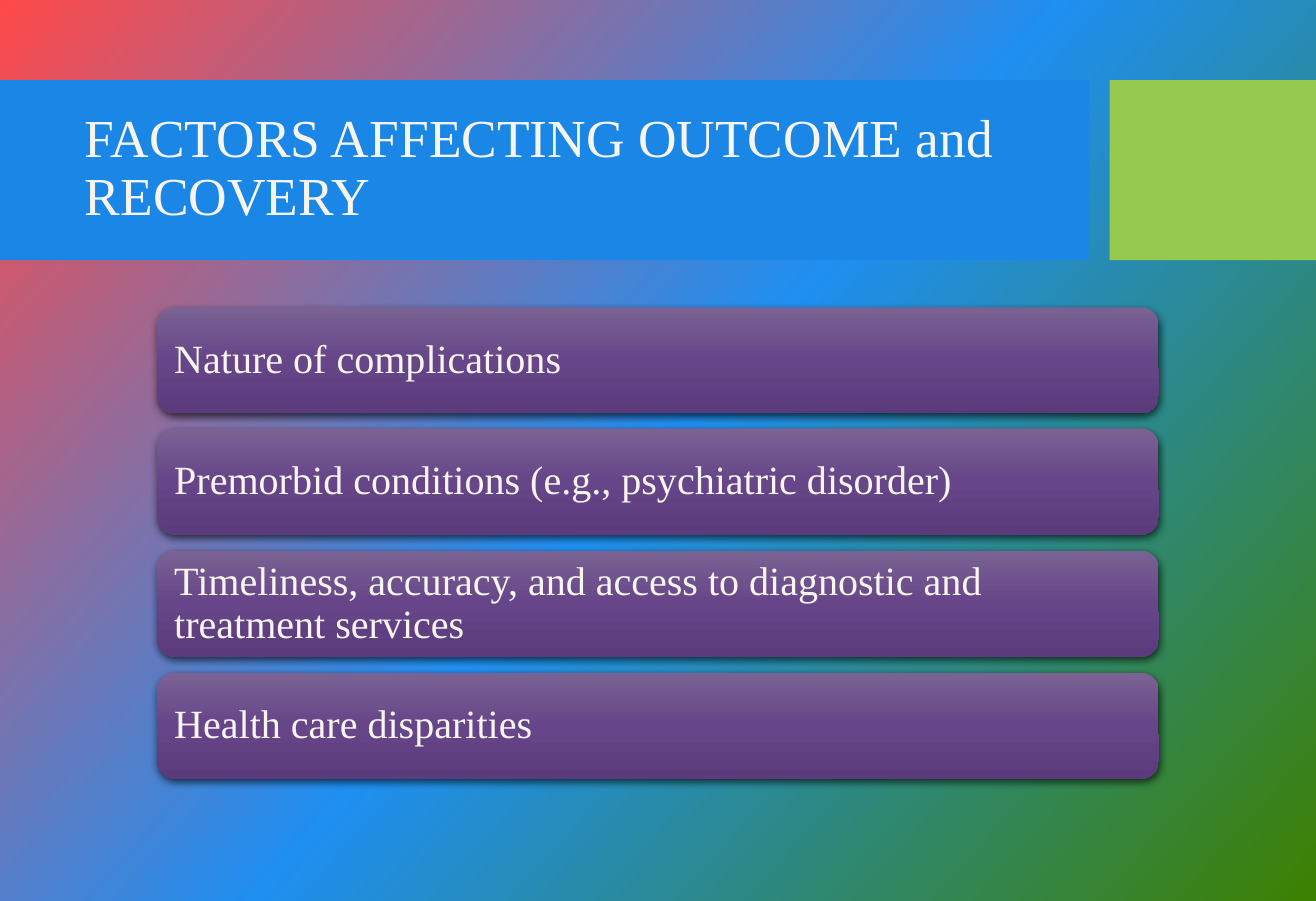
import copy
import pptx
import pptx.dml.color
import pptx.enum.shapes
import pptx.enum.text
import pptx.oxml
import pptx.oxml.ns
import pptx.util

PX = 7620
COLORS = {
    "banner": "1A86E5",
    "accent": "96CA4F",
    "text": "F8F5EF",
    "backdrop": ["FF4949", "1F8FF1", "3D8100"],
    "bar": ["7A6394", "664588", "5B3B7C"],
}
FONT = "Times New Roman"
SHAPES = pptx.enum.shapes.MSO_SHAPE
FACTORS = [
    "Nature of complications",
    "Premorbid conditions (e.g., psychiatric disorder)",
    "Timeliness, accuracy, and access to diagnostic and treatment services",
    "Health care disparities",
]
SHADOW = (
    f'<a:outerShdw {pptx.oxml.ns.nsdecls("a")} blurRad="57150" dist="19050" '
    'dir="5400000" algn="ctr" rotWithShape="0"><a:srgbClr val="000000">'
    '<a:alpha val="63000"/></a:srgbClr></a:outerShdw>'
)


def blend(fill, element, colors, clockwise_angle):
    fill.gradient()
    fill.gradient_angle = 360 - clockwise_angle
    stops = element.xpath(".//a:gsLst")[0]
    stops.insert(1, copy.deepcopy(stops[0]))
    for stop, position, color in zip(fill.gradient_stops, (0, 0.5, 1), colors):
        stop.position = position
        stop.color.rgb = pptx.dml.color.RGBColor.from_string(color)


def write(frame, words, size):
    frame.text = words
    frame.word_wrap = True
    frame.vertical_anchor = pptx.enum.text.MSO_ANCHOR.MIDDLE
    frame.margin_left = frame.margin_right = 12 * PX
    paragraph = frame.paragraphs[0]
    paragraph.alignment = pptx.enum.text.PP_ALIGN.LEFT
    paragraph.line_spacing = 0.9
    font = paragraph.runs[0].font
    font.name = FONT
    font.size = pptx.util.Pt(size)
    font.color.rgb = pptx.dml.color.RGBColor.from_string(COLORS["text"])


deck = pptx.Presentation()
deck.slide_width = 1314 * PX
deck.slide_height = 900 * PX
slide = deck.slides.add_slide(deck.slide_layouts[6])
blend(slide.background.fill, slide.element, COLORS["backdrop"], 42)

for part, left, width in (("banner", 0, 1087), ("accent", 1108, 206)):
    block = slide.shapes.add_shape(
        SHAPES.RECTANGLE, left * PX, 80 * PX, width * PX, 180 * PX)
    block.shadow.inherit = False
    block.fill.solid()
    block.fill.fore_color.rgb = pptx.dml.color.RGBColor.from_string(COLORS[part])
    block.line.fill.background()

title = slide.shapes.add_textbox(73 * PX, 98 * PX, 1036 * PX, 142 * PX)
write(title.text_frame, "FACTORS AFFECTING OUTCOME and RECOVERY", 32)

for row, factor in enumerate(FACTORS):
    top = 307 + row * 365 // 3
    bar = slide.shapes.add_shape(
        SHAPES.ROUNDED_RECTANGLE, 157 * PX, top * PX, 1000 * PX, 106 * PX)
    blend(bar.fill, bar.element, COLORS["bar"], 90)
    bar.line.fill.background()
    bar.shadow.inherit = False
    effects = bar.element.xpath("./p:spPr/a:effectLst")[0]
    effects.append(pptx.oxml.parse_xml(SHADOW))
    write(bar.text_frame, factor, 24)

deck.save("out.pptx")
